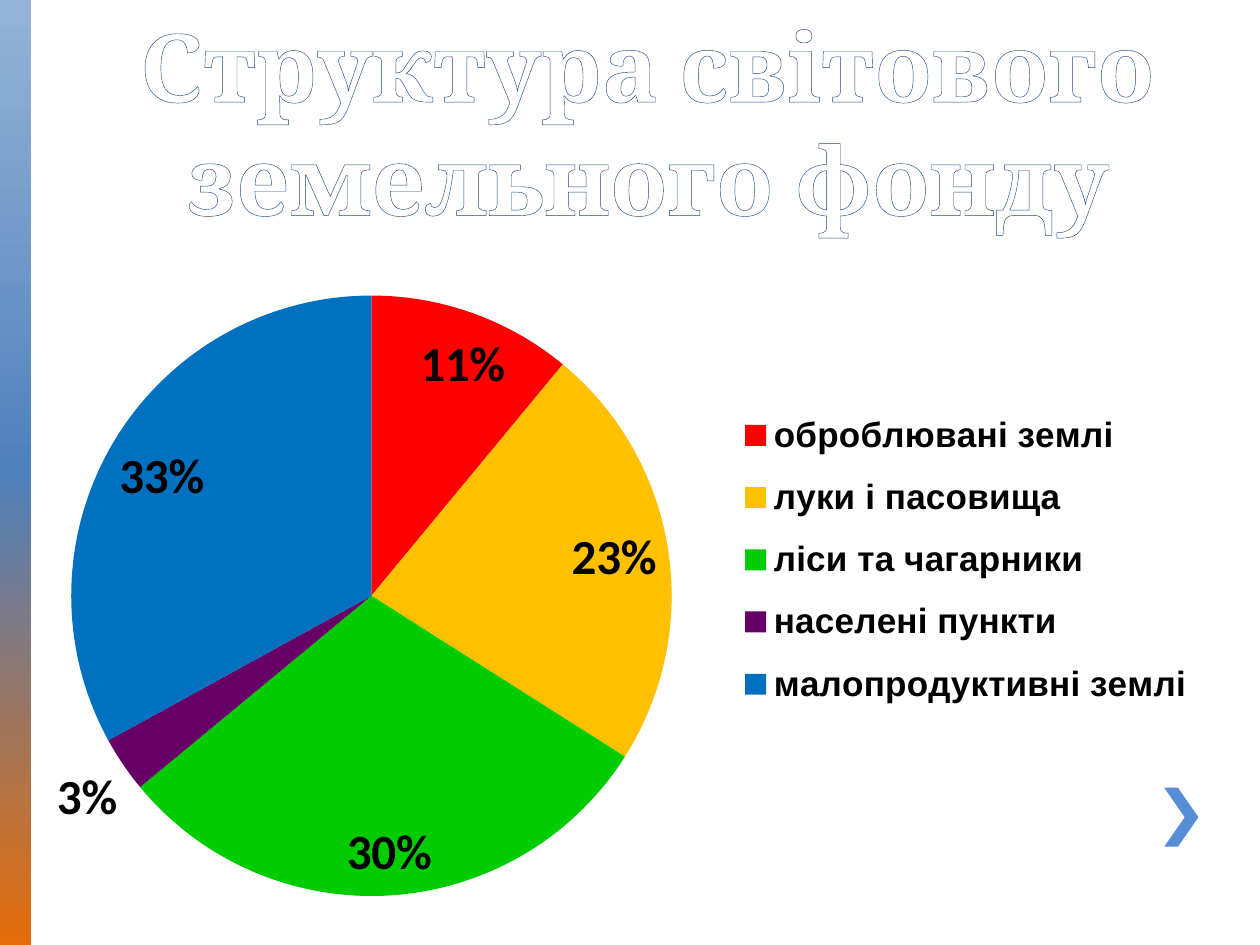
import copy
from dataclasses import dataclass

import pptx
import pptx.chart.data
import pptx.dml.color
import pptx.enum.chart
import pptx.enum.shapes
import pptx.enum.text
import pptx.oxml
import pptx.oxml.ns
import pptx.util
from pptx.util import Cm, Pt

RGBColor = pptx.dml.color.RGBColor
qn = pptx.oxml.ns.qn

WHITE = RGBColor(0xFF, 0xFF, 0xFF)
BLACK = RGBColor(0x00, 0x00, 0x00)
OUTLINE = RGBColor(0x1F, 0x49, 0x7D)
CHEVRON = RGBColor(0x55, 0x8E, 0xD5)
BAND_STOPS = [
    (0, RGBColor(0x95, 0xB3, 0xD7)),
    (0.5, RGBColor(0x4F, 0x81, 0xBD)),
    (1, RGBColor(0xE4, 0x6C, 0x0A)),
]


@dataclass
class Land:
    name: str
    percent: int
    color: RGBColor


LANDS = [
    Land("оброблювані землі", 11, RGBColor(0xFF, 0x00, 0x00)),
    Land("луки і пасовища", 23, RGBColor(0xFF, 0xC0, 0x00)),
    Land("ліси та чагарники", 30, RGBColor(0x00, 0xCC, 0x00)),
    Land("населені пункти", 3, RGBColor(0x66, 0x00, 0x66)),
    Land("малопродуктивні землі", 33, RGBColor(0x00, 0x70, 0xC0)),
]


def add_band(slide, height: int) -> None:
    band = slide.shapes.add_shape(
        pptx.enum.shapes.MSO_SHAPE.RECTANGLE, 0, 0, Cm(0.63), height)
    band.shadow.inherit = False
    band.line.fill.background()
    band.fill.gradient()
    band.fill.gradient_angle = 270
    stop_list = next(band._element.iter(qn("a:gsLst")))
    stop_list.append(copy.deepcopy(stop_list[-1]))
    for stop, (position, color) in zip(band.fill.gradient_stops, BAND_STOPS):
        stop.position = position
        stop.color.rgb = color


def add_chevron(slide) -> None:
    chevron = slide.shapes.add_shape(
        pptx.enum.shapes.MSO_SHAPE.CHEVRON, Cm(23.47), Cm(15.88), Cm(0.69), Cm(1.19))
    chevron.adjustments[0] = 0.6
    chevron.shadow.inherit = False
    chevron.fill.solid()
    chevron.fill.fore_color.rgb = CHEVRON
    chevron.line.fill.background()


def set_title(slide) -> None:
    title = slide.shapes.title
    title.left, title.top, title.width, title.height = Cm(0.71), 0, Cm(24.69), Cm(4.88)
    frame = title.text_frame
    frame.text = "Структура світового земельного фонду"
    frame.word_wrap = True
    frame.auto_size = pptx.enum.text.MSO_AUTO_SIZE.NONE
    frame.vertical_anchor = pptx.enum.text.MSO_ANCHOR.MIDDLE
    paragraph = frame.paragraphs[0]
    paragraph.alignment = pptx.enum.text.PP_ALIGN.CENTER
    run = paragraph.runs[0]
    run.font.name = "Cambria"
    run.font.size = Pt(54)
    run.font.bold = True
    run.font.color.rgb = WHITE
    outline = pptx.oxml.parse_xml(
        f'<a:ln {pptx.oxml.ns.nsdecls("a")} w="{Pt(1)}"><a:solidFill>'
        f'<a:srgbClr val="{OUTLINE}"/></a:solidFill></a:ln>')
    run.font._element.insert(0, outline)


def layout_xml(x: float, y: float, w: float, h: float, inner: bool = False):
    """Manual chart layout in fractions of the chart's size."""
    target = '<c:layoutTarget val="inner"/>' if inner else ""
    values = "".join(f'<c:{key} val="{value}"/>'
                     for key, value in zip("xywh", (x, y, w, h)))
    return pptx.oxml.parse_xml(
        f'<c:layout {pptx.oxml.ns.nsdecls("c")}><c:manualLayout>{target}'
        f'<c:xMode val="edge"/><c:yMode val="edge"/>{values}'
        '</c:manualLayout></c:layout>')


def place(element, layout, index: int) -> None:
    for old in element.findall(qn("c:layout")):
        element.remove(old)
    element.insert(index, layout)


def add_land_chart(slide) -> None:
    data = pptx.chart.data.CategoryChartData()
    data.categories = [land.name for land in LANDS]
    data.add_series("Series 1", [land.percent for land in LANDS])
    chart = slide.shapes.add_chart(
        pptx.enum.chart.XL_CHART_TYPE.PIE,
        Cm(0.71), Cm(5.54), Cm(24.21), Cm(13.21), data).chart
    chart.has_title = False
    chart.font.name = "Calibri"
    chart.font.size = Pt(18)
    chart.font.color.rgb = BLACK

    chart.has_legend = True
    legend = chart.legend
    legend.position = pptx.enum.chart.XL_LEGEND_POSITION.RIGHT
    legend.include_in_layout = False
    legend.font.name = "Arial"
    legend.font.size = Pt(20)
    legend.font.bold = True
    legend.font.color.rgb = BLACK
    place(legend._element, layout_xml(0.57, 0.18, 0.41, 0.51), 1)

    plot = chart.plots[0]
    plot.vary_by_categories = True
    place(chart._chartSpace.chart.plotArea,
          layout_xml(0.03, 0.03, 0.5, 0.92, inner=True), 0)
    series = plot.series[0]
    for index, land in enumerate(LANDS):
        fill = series.points[index].format.fill
        fill.solid()
        fill.fore_color.rgb = land.color

    labels = series.data_labels
    labels.show_percentage = True
    labels.show_value = False
    labels.number_format = "0%"
    labels.number_format_is_linked = False
    labels.position = pptx.enum.chart.XL_LABEL_POSITION.BEST_FIT
    labels.font.name = "Calibri"
    labels.font.size = Pt(28)
    labels.font.bold = True
    labels.font.color.rgb = BLACK


def main() -> None:
    presentation = pptx.Presentation()
    presentation.slide_width = Cm(25.4)
    presentation.slide_height = Cm(19.05)
    slide = presentation.slides.add_slide(presentation.slide_layouts[5])
    add_band(slide, presentation.slide_height)
    add_chevron(slide)
    set_title(slide)
    add_land_chart(slide)
    presentation.save("out.pptx")


if __name__ == "__main__":
    main()
